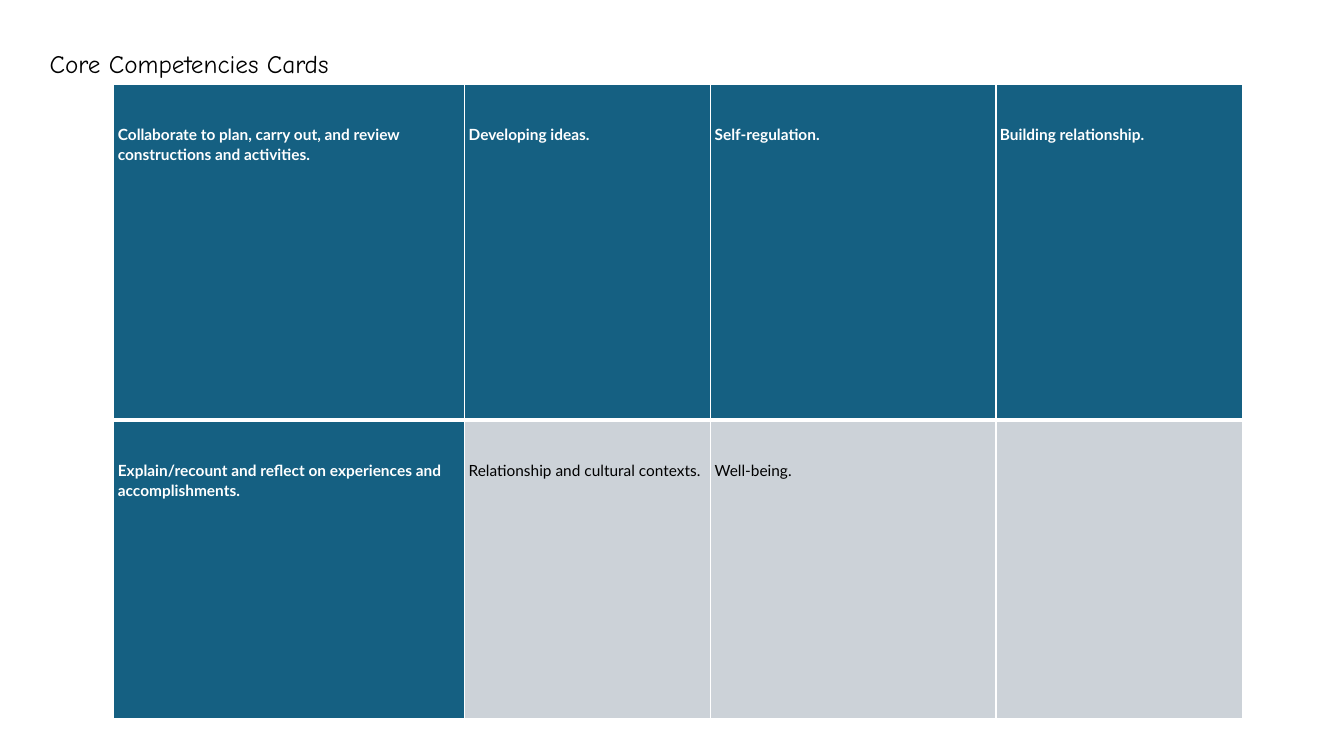
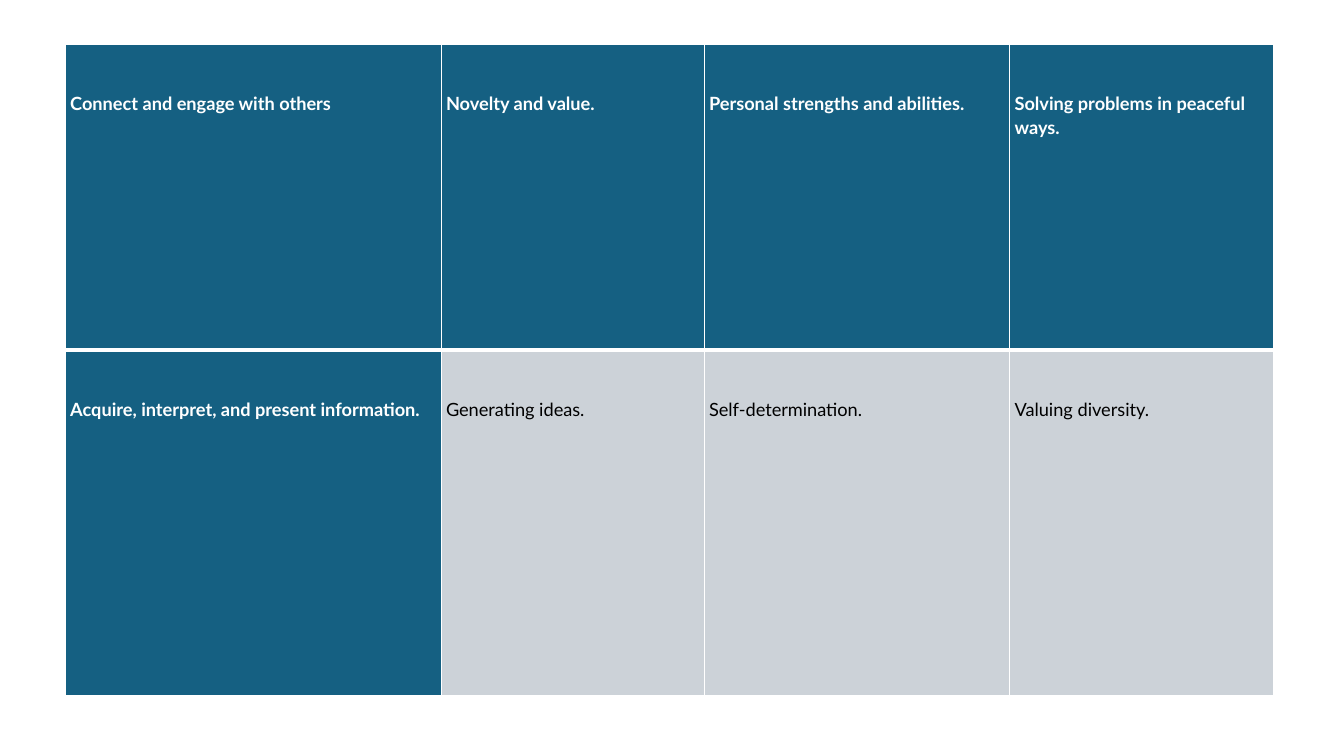
import pptx
import pptx.dml.color
import pptx.oxml
import pptx.oxml.ns
import pptx.util

Cm = pptx.util.Cm
Pt = pptx.util.Pt
RGBColor = pptx.dml.color.RGBColor

BLUE = RGBColor(0x15, 0x60, 0x82)
GREY = RGBColor(0xCC, 0xD2, 0xD8)
WHITE = RGBColor(0xFF, 0xFF, 0xFF)
BLACK = RGBColor(0x00, 0x00, 0x00)
HEAD_FONT = "Comic Neue"
CARD_FONT = "Lato"
LEADING = 1.07
DROP = 2.57  # space above the card text, in font sizes

PLAN_CARDS = [
    ["Collaborate to plan, carry out, and review constructions and activities.",
     "Developing ideas.", "Self-regulation.", "Building relationship."],
    ["Explain/recount and reflect on experiences and accomplishments.",
     "Relationship and cultural contexts.", "Well-being.", ""],
]
LINK_CARDS = [
    ["Connect and engage with others", "Novelty and value.",
     "Personal strengths and abilities.", "Solving problems in peaceful ways."],
    ["Acquire, interpret, and present information.", "Generating ideas.",
     "Self-determination.", "Valuing diversity."],
]


def set_font(para, name, size, color, bold=False):
    for run in para.runs:
        font = run.font
        font.name, font.size, font.bold = name, Pt(size), bold
        font.color.rgb = color


def add_title(slide, text):
    box = slide.shapes.add_textbox(Cm(1), Cm(1.09), Cm(24.3), Cm(1.07))
    frame = box.text_frame
    frame.word_wrap = True
    frame.text = text
    set_font(frame.paragraphs[0], HEAD_FONT, 18, BLACK)


def set_edges(cell, widths):
    """Draw white cell borders; widths maps a side (L, R, T, B) to points."""
    props = cell._tc.get_or_add_tcPr()
    for spot, (side, width) in enumerate(widths.items()):
        line = pptx.oxml.parse_xml(
            f'<a:ln{side} {pptx.oxml.ns.nsdecls("a")} w="{Pt(width)}">'
            f'<a:solidFill><a:srgbClr val="{WHITE}"/></a:solidFill></a:ln{side}>')
        props.insert(spot, line)


def fill_card(cell, text, size, inset, strong):
    cell.fill.solid()
    cell.fill.fore_color.rgb = BLUE if strong else GREY
    cell.margin_left = cell.margin_right = Cm(inset)
    cell.margin_top = Pt(size * DROP)
    cell.margin_bottom = 0
    cell.text_frame.text = text
    para = cell.text_frame.paragraphs[0]
    para.line_spacing = LEADING
    set_font(para, CARD_FONT, size, WHITE if strong else BLACK, strong)


def add_cards(slide, cards, left, top, widths, heights, size, inset):
    """Add a card table whose first row and first column stand out."""
    frame = slide.shapes.add_table(
        len(heights), len(widths), Cm(left), Cm(top),
        Cm(sum(widths)), Cm(sum(heights)))
    table = frame.table
    table.first_col = True
    table.horz_banding = False
    for col, width in zip(table.columns, widths):
        col.width = Cm(width)
    for row, height in zip(table.rows, heights):
        row.height = Cm(height)
    for r, texts in enumerate(cards):
        for c, text in enumerate(texts):
            cell = table.cell(r, c)
            fill_card(cell, text, size, inset, r == 0 or c == 0)
            set_edges(cell, {"L": 1, "R": 1,
                             "T": 3 if r == 1 else 1,
                             "B": 3 if r == 0 else 1})


def main():
    deck = pptx.Presentation()
    deck.slide_width, deck.slide_height = Cm(33.87), Cm(19.05)
    blank = deck.slide_layouts[6]

    slide = deck.slides.add_slide(blank)
    add_title(slide, "Core Competencies Cards")
    add_cards(slide, PLAN_CARDS, 2.87, 2.13, [8.84, 6.2, 7.19, 6.22],
              [8.46, 7.52], size=11, inset=0.1)

    slide = deck.slides.add_slide(blank)
    add_cards(slide, LINK_CARDS, 1.65, 1.12, [9.47, 6.63, 7.7, 6.65],
              [7.7, 8.71], size=13, inset=0.12)

    deck.save("out.pptx")


if __name__ == "__main__":
    main()
